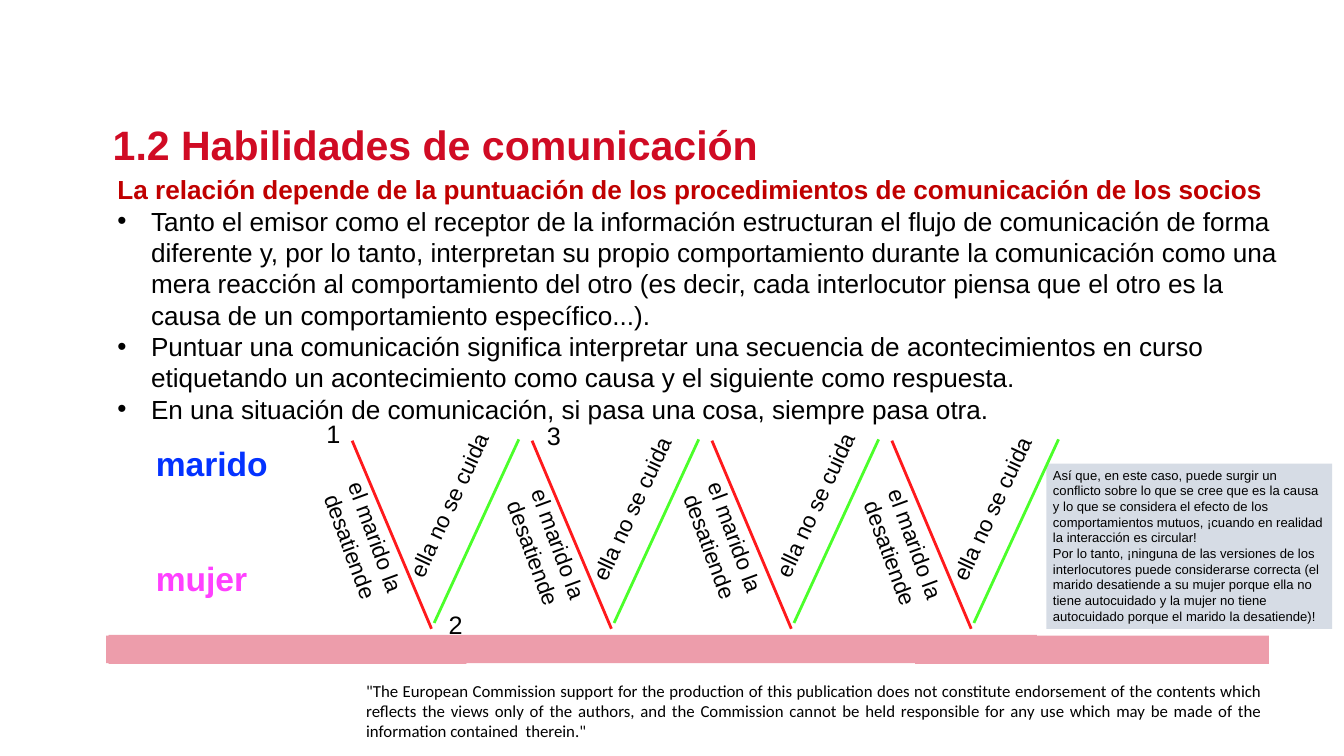
from lxml.etree import SubElement
from pptx import Presentation
from pptx.dml.color import RGBColor
from pptx.enum.shapes import MSO_CONNECTOR as CONN, MSO_SHAPE as SHAPE
from pptx.enum.text import MSO_ANCHOR as ANCHOR, PP_ALIGN as ALIGN
from pptx.oxml.ns import qn
from pptx.util import Cm, Pt

BLACK = RGBColor(0x00, 0x00, 0x00)
TITLE_RED = RGBColor(0xD0, 0x0B, 0x24)
DARK_RED = RGBColor(0xC0, 0x00, 0x00)
BLUE = RGBColor(0x04, 0x32, 0xFF)
MAGENTA = RGBColor(0xFF, 0x40, 0xFF)
RED = RGBColor(0xFF, 0x19, 0x1C)
GREEN = RGBColor(0x4B, 0xFF, 0x2A)
PINK = RGBColor(0xED, 0x9D, 0xAB)
PALE_BLUE = RGBColor(0xD6, 0xDC, 0xE5)

TITLE = "1.2 Habilidades de comunicación"
HEADING = "La relación depende de la puntuación de los procedimientos de comunicación de los socios"
BULLETS = [
    "Tanto el emisor como el receptor de la información estructuran el flujo de comunicación de forma diferente y, por lo tanto, interpretan su propio comportamiento durante la comunicación como una mera reacción al comportamiento del otro (es decir, cada interlocutor piensa que el otro es la causa de un comportamiento específico...).",
    "Puntuar una comunicación significa interpretar una secuencia de acontecimientos en curso etiquetando un acontecimiento como causa y el siguiente como respuesta.",
    "En una situación de comunicación, si pasa una cosa, siempre pasa otra.",
]
CONCLUSION = [
    "Así que, en este caso, puede surgir un conflicto sobre lo que se cree que es la causa y lo que se considera el efecto de los comportamientos mutuos, ¡cuando en realidad la interacción es circular!",
    "Por lo tanto, ¡ninguna de las versiones de los interlocutores puede considerarse correcta (el marido desatiende a su mujer porque ella no tiene autocuidado y la mujer no tiene autocuidado porque el marido la desatiende)!",
]
DISCLAIMER = "\"The European Commission support for the production of this publication does not constitute endorsement of the contents which reflects the views only of the authors, and the Commission cannot be held responsible for any use which may be made of the information contained  therein.\""
NUMBERS = [("1", 12.09, 15.7), ("3", 20.42, 15.75), ("2", 16.71, 22.91)]
HUSBAND_LABELS = [(9.78, 19.33), (16.69, 19.58), (23.37, 19.33), (30.18, 19.58)]
WIFE_LABELS = [(16.97, 15.9), (23.88, 16.05), (30.81, 15.9), (37.49, 16.05)]
BAND = [
    (47.96, 24.03), (39.19, 24.03), (39.19, 24), (4.11, 24), (4.11, 24.03),
    (4.01, 24.03), (4.01, 25.07), (4.11, 25.07), (4.11, 25.1), (17.63, 25.1),
    (17.63, 25.07), (34.59, 25.07), (34.59, 25.1), (47.96, 25.1),
]
CYCLE_LEFT, CYCLE_PITCH, CYCLES = 13.31, 6.8, 4
STROKES = [
    ((0, 16.66), (3, 23.77), RED),
    ((3.1, 23.55), (6.3, 16.61), GREEN),
]


def frame(shape, inset=True):
    tf = shape.text_frame
    tf.word_wrap = True
    tf.vertical_anchor = ANCHOR.TOP
    across, down = (0.25, 0.13) if inset else (0, 0)
    tf.margin_left = tf.margin_right = Cm(across)
    tf.margin_top = tf.margin_bottom = Cm(down)
    return tf


def text_box(s, left, top, width, height, rotation=0, inset=True):
    box = s.shapes.add_textbox(Cm(left), Cm(top), Cm(width), Cm(height))
    box.rotation = rotation
    return frame(box, inset)


def write(tf, text, size, color=BLACK, bold=False, font="Arial", align=ALIGN.LEFT):
    p = tf.paragraphs[0]
    if p.runs:
        p = tf.add_paragraph()
    p.alignment = align
    r = p.add_run()
    r.text = text
    r.font.name = font
    r.font.size = Pt(size)
    r.font.bold = bold
    r.font.color.rgb = color
    return p


def add_bullet(p):
    pPr = p._p.get_or_add_pPr()
    pPr.set("marL", str(Cm(1.27)))
    pPr.set("indent", str(Cm(-1.27)))
    SubElement(pPr, qn("a:buFont")).set("typeface", "Arial")
    SubElement(pPr, qn("a:buChar")).set("char", "•")


def paint(shape, color):
    shape.shadow.inherit = False
    shape.fill.solid()
    shape.fill.fore_color.rgb = color
    shape.line.fill.background()


def add_line(s, start, end, color):
    line = s.shapes.add_connector(CONN.STRAIGHT, *(Cm(v) for v in start + end))
    line.line.color.rgb = color
    line.line.width = Pt(3)
    SubElement(line._element.spPr, qn("a:effectLst"))


def main():
    prs = Presentation()
    prs.slide_width, prs.slide_height = Cm(50.8), Cm(28.58)
    s = prs.slides.add_slide(prs.slide_layouts[6])

    points = [(Cm(x), Cm(y)) for x, y in BAND]
    outline = s.shapes.build_freeform(*points[0])
    outline.add_line_segments(points[1:], close=True)
    paint(outline.convert_to_shape(), PINK)

    tf = text_box(s, 13.84, 25.78, 33.86, 1.93, inset=False)
    p = write(tf, DISCLAIMER, 18, font="Calibri", align=ALIGN.JUSTIFY)
    p.line_spacing = 0.98

    tf = text_box(s, 4.19, 6.43, 44.4, 11.02)
    write(tf, HEADING, 28, DARK_RED, True)
    for text in BULLETS:
        add_bullet(write(tf, text, 28))

    tf = text_box(s, 5.64, 16.61, 7.98, 6.4)
    write(tf, "marido", 36, BLUE, True)
    write(tf, "mujer", 36, MAGENTA, True).space_before = Pt(80)

    panel = s.shapes.add_shape(SHAPE.RECTANGLE, Cm(39.55), Cm(17.53), Cm(10.8), Cm(6.25))
    paint(panel, PALE_BLUE)
    tf = frame(panel)
    for text in CONCLUSION:
        write(tf, text, 14)

    write(text_box(s, 4.01, 4.37, 27.23, 2.13), TITLE, 44, TITLE_RED, True)

    for i in range(CYCLES):
        left = CYCLE_LEFT + i * CYCLE_PITCH
        for (x1, y1), (x2, y2), color in STROKES:
            add_line(s, (left + x1, y1), (left + x2, y2), color)

    for text, left, top in NUMBERS:
        write(text_box(s, left, top, 1, 1.42), text, 27)
    for left, top in HUSBAND_LABELS:
        tf = text_box(s, left, top, 7.9, 2.31, rotation=69.8)
        write(tf, "el marido la desatiende", 24, align=ALIGN.CENTER)
    for left, top in WIFE_LABELS:
        write(text_box(s, left, top, 7.16, 8.86, rotation=295), "ella no se cuida", 24)

    prs.save("out.pptx")


if __name__ == "__main__":
    main()
